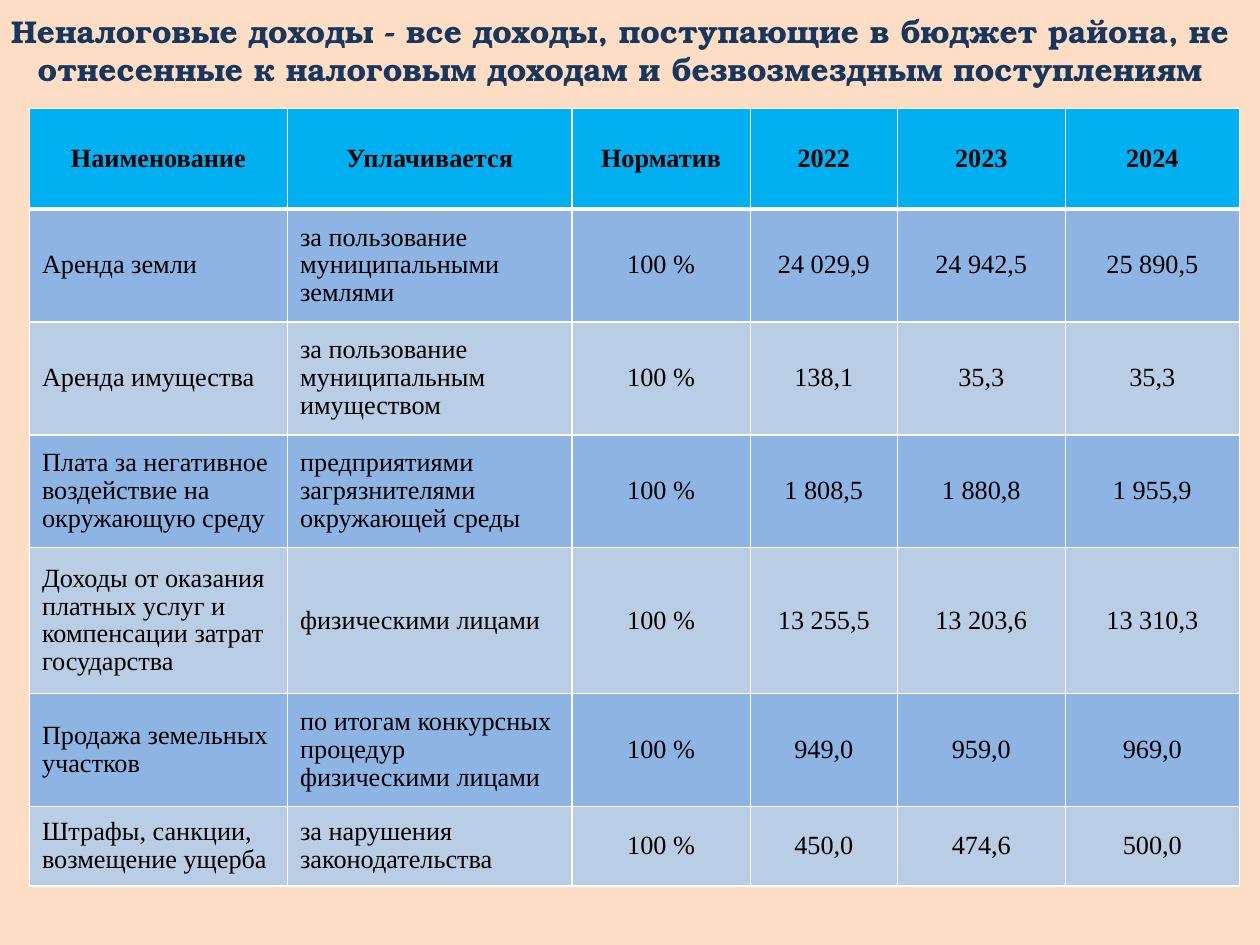
"""Build a slide with a table of non-tax budget revenues for 2022-2024."""
from dataclasses import dataclass

from lxml import etree
from pptx import Presentation
from pptx.dml.color import RGBColor
from pptx.enum.text import MSO_ANCHOR, PP_ALIGN
from pptx.oxml.ns import qn
from pptx.util import Pt

MIDDLE = MSO_ANCHOR.MIDDLE
LEFT, CENTER = PP_ALIGN.LEFT, PP_ALIGN.CENTER


@dataclass(frozen=True)
class Theme:
    background: str = "FDDEC5"
    title: str = "17375E"
    text: str = "000000"
    border: str = "FFFFFF"
    header: str = "00B0F0"
    bands: tuple = ("8EB4E3", "B9CDE5")
    title_font: str = "TeX Gyre Bonum"
    table_font: str = "Times New Roman"
    title_size: int = 18
    table_size: int = 15


def set_font(p, name, size, color, bold):
    for r in p.runs:
        r.font.name = name
        r.font.size = Pt(size)
        r.font.bold = bold
        r.font.color.rgb = RGBColor.from_string(color)


def add_border(cell, side, width):
    ln = etree.SubElement(cell._tc.get_or_add_tcPr(), qn(f"a:ln{side}"), w=str(Pt(width)))
    fill = etree.SubElement(ln, qn("a:solidFill"))
    etree.SubElement(fill, qn("a:srgbClr"), val=theme.border)


theme = Theme()
title = (
    "Неналоговые доходы - все доходы, поступающие в бюджет района, "
    "не отнесенные к налоговым доходам и безвозмездным поступлениям"
)
rate = "100 %"
rows = [
    ("Наименование", "Уплачивается", "Норматив", "2022", "2023", "2024"),
    ("Аренда земли", "за пользование муниципальными землями",
     rate, "24 029,9", "24 942,5", "25 890,5"),
    ("Аренда имущества", "за пользование муниципальным имуществом",
     rate, "138,1", "35,3", "35,3"),
    ("Плата за негативное воздействие на окружающую среду",
     "предприятиями загрязнителями окружающей среды",
     rate, "1 808,5", "1 880,8", "1 955,9"),
    ("Доходы от оказания платных услуг и компенсации затрат государства",
     "физическими лицами", rate, "13 255,5", "13 203,6", "13 310,3"),
    ("Продажа земельных участков",
     "по итогам конкурсных процедур физическими лицами",
     rate, "949,0", "959,0", "969,0"),
    ("Штрафы, санкции,\nвозмещение ущерба", "за нарушения законодательства",
     rate, "450,0", "474,6", "500,0"),
]
col_widths = [147.5, 162.5, 102, 84, 96, 99.5]
row_heights = [57.5, 64.5, 64.5, 64.5, 83.5, 64.5, 45.5]

prs = Presentation()
prs.slide_width, prs.slide_height = Pt(720), Pt(540)
s = prs.slides.add_slide(prs.slide_layouts[5])
s.background.fill.solid()
s.background.fill.fore_color.rgb = RGBColor.from_string(theme.background)

sp = s.shapes.title
sp.left, sp.top, sp.width, sp.height = Pt(-28), Pt(0), Pt(765), Pt(78.5)
tf = sp.text_frame
tf.text = title
tf.word_wrap = True
tf.vertical_anchor = MIDDLE
tf.margin_bottom = Pt(25)
p = tf.paragraphs[0]
p.alignment = CENTER
set_font(p, theme.title_font, theme.title_size, theme.title, True)

table = s.shapes.add_table(
    len(rows), len(col_widths), Pt(16.8), Pt(62),
    Pt(sum(col_widths)), Pt(sum(row_heights)),
).table
for column, width in zip(table.columns, col_widths):
    column.width = Pt(width)
for row, height in zip(table.rows, row_heights):
    row.height = Pt(height)

for i, values in enumerate(rows):
    is_header = i == 0
    color = theme.header if is_header else theme.bands[(i - 1) % 2]
    borders = {"L": 1, "R": 1, "T": 3 if i == 1 else 1, "B": 3 if is_header else 1}
    for j, value in enumerate(values):
        cell = table.cell(i, j)
        cell.text = value
        cell.vertical_anchor = MIDDLE
        for side, width in borders.items():
            add_border(cell, side, width)
        cell.fill.solid()
        cell.fill.fore_color.rgb = RGBColor.from_string(color)
        for p in cell.text_frame.paragraphs:
            p.alignment = CENTER if is_header or j > 1 else LEFT
            p.line_spacing = 0.96
            set_font(p, theme.table_font, theme.table_size, theme.text, is_header)

prs.save("out.pptx")
